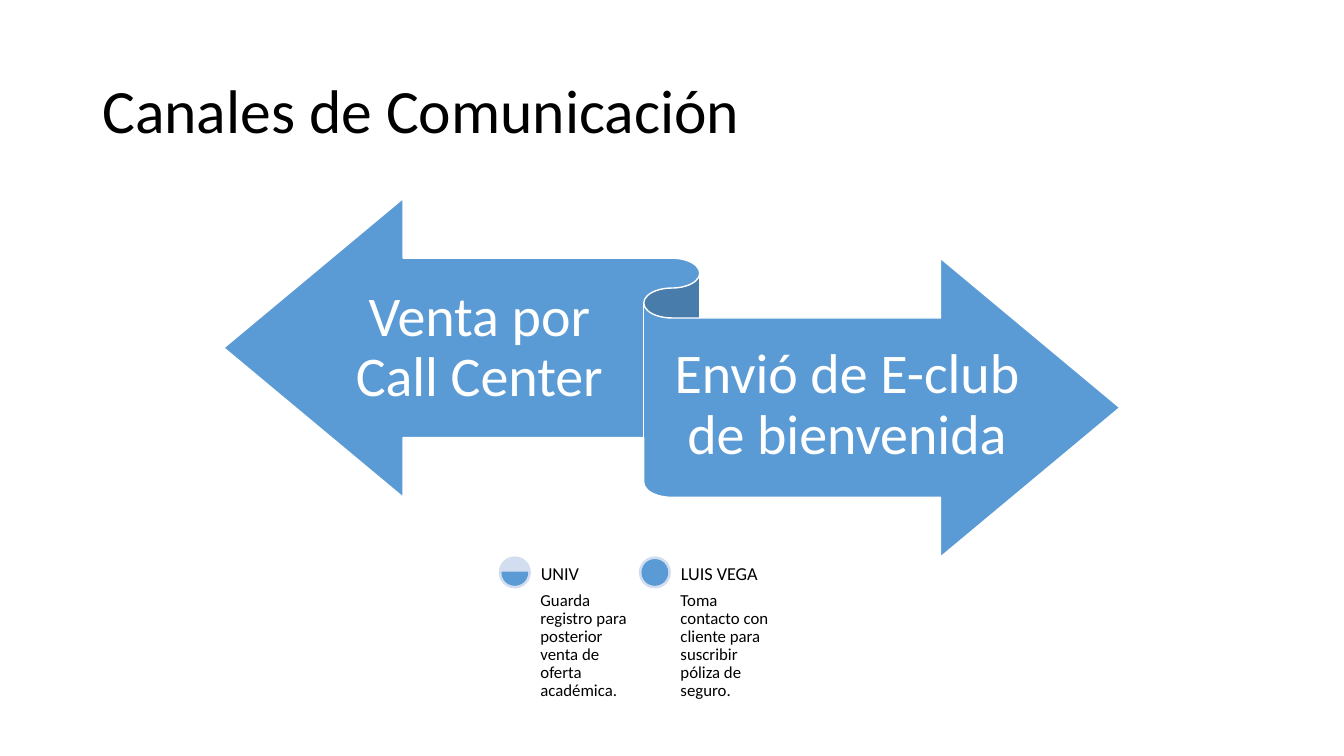
import pptx
import pptx.dml.color
import pptx.enum.shapes
import pptx.enum.text
import pptx.util

Cm = pptx.util.Cm
Pt = pptx.util.Pt
RGBColor = pptx.dml.color.RGBColor
SHAPE = pptx.enum.shapes.MSO_SHAPE
ALIGN = pptx.enum.text.PP_ALIGN
ANCHOR = pptx.enum.text.MSO_ANCHOR

BLACK = RGBColor(0x00, 0x00, 0x00)
WHITE = RGBColor(0xFF, 0xFF, 0xFF)
BLUE = RGBColor(0x5B, 0x9B, 0xD5)
PALE_BLUE = RGBColor(0xD2, 0xDE, 0xEF)

# Direction, left, width and top of each arrow label, in cm
ARROW_LABELS = [
    ("Venta por Call Center", 8.36, 7.44, 6.58),
    ("Envió de E-club de bienvenida", 16.94, 8.81, 8.03),
]

# Name, description and chord angles of each channel; an angle unit is 100000/60000 degree
CHANNELS = [
    ("UNIV", "Guarda registro para posterior venta de oferta académica.", (0, 108)),
    ("LUIS VEGA", "Toma contacto con cliente para suscribir póliza de seguro.", (162, 162)),
]
CHANNEL_LEFT, CHANNEL_TOP, CHANNEL_PITCH = 12.57, 14.02, 3.53
DISC_SIZE, CHORD_SIZE = 0.81, 0.64
TEXT_OFFSET, TEXT_WIDTH = 0.97, 2.39


class SlideBuilder:
    """Holds the font and the current slide; all lengths are in cm."""

    def __init__(self, slide, font="Calibri"):
        self.slide = slide
        self.font = font

    def text(self, text, left, top, width, height, *, size, color=BLACK,
             align=ALIGN.LEFT, anchor=ANCHOR.TOP, insets=(0, 0, 0, 0)):
        """Add a wrapped text box; insets are left, top, right, bottom."""
        box = self.slide.shapes.add_textbox(Cm(left), Cm(top), Cm(width), Cm(height))
        frame = box.text_frame
        frame.word_wrap = True
        frame.vertical_anchor = anchor
        (frame.margin_left, frame.margin_top,
         frame.margin_right, frame.margin_bottom) = map(Cm, insets)
        paragraph = frame.paragraphs[0]
        paragraph.alignment = align
        paragraph.line_spacing = 0.9
        run = paragraph.add_run()
        run.text = text
        run.font.name = self.font
        run.font.size = Pt(size)
        run.font.color.rgb = color

    def shape(self, kind, left, top, width, height, *, fill, line=None, adjustments=()):
        shape = self.slide.shapes.add_shape(kind, Cm(left), Cm(top), Cm(width), Cm(height))
        shape.shadow.inherit = False
        for index, value in enumerate(adjustments):
            shape.adjustments[index] = value
        shape.fill.solid()
        shape.fill.fore_color.rgb = fill
        if line is None:
            shape.line.fill.background()
        else:
            shape.line.color.rgb = line
            shape.line.width = Pt(1)

    def channel(self, name, description, angles, left, top):
        """Add a filled disc with a name beside it and a description below."""
        margin = (DISC_SIZE - CHORD_SIZE) / 2
        self.shape(SHAPE.OVAL, left, top, DISC_SIZE, DISC_SIZE, fill=PALE_BLUE)
        self.shape(SHAPE.CHORD, left + margin, top + margin, CHORD_SIZE, CHORD_SIZE,
                   fill=BLUE, line=BLUE, adjustments=angles)
        text_left = left + TEXT_OFFSET
        self.text(description, text_left, top + DISC_SIZE, TEXT_WIDTH, 3.4,
                  size=12, insets=(0.08,) * 4)
        self.text(name, text_left, top, TEXT_WIDTH, DISC_SIZE,
                  size=13, anchor=ANCHOR.BOTTOM, insets=(0.09,) * 4)


def main():
    presentation = pptx.Presentation()
    presentation.slide_width = Cm(33.87)
    presentation.slide_height = Cm(19.05)
    builder = SlideBuilder(presentation.slides.add_slide(presentation.slide_layouts[6]))

    builder.text("Canales de Comunicación", 2.33, 1.02, 29.21, 3.68, size=44,
                 anchor=ANCHOR.MIDDLE, insets=(0.25, 0.13, 0.25, 0.13))
    builder.shape(SHAPE.LEFT_RIGHT_RIBBON, 5.64, 5, 22.58, 9.04, fill=BLUE, line=WHITE)
    for label, left, width, top in ARROW_LABELS:
        builder.text(label, left, top, width, 4.42, size=40, color=WHITE,
                     align=ALIGN.CENTER, anchor=ANCHOR.MIDDLE, insets=(0, 0.41, 0, 0.43))
    for index, (name, description, angles) in enumerate(CHANNELS):
        builder.channel(name, description, angles,
                        CHANNEL_LEFT + index * CHANNEL_PITCH, CHANNEL_TOP)

    presentation.save("out.pptx")


if __name__ == "__main__":
    main()
